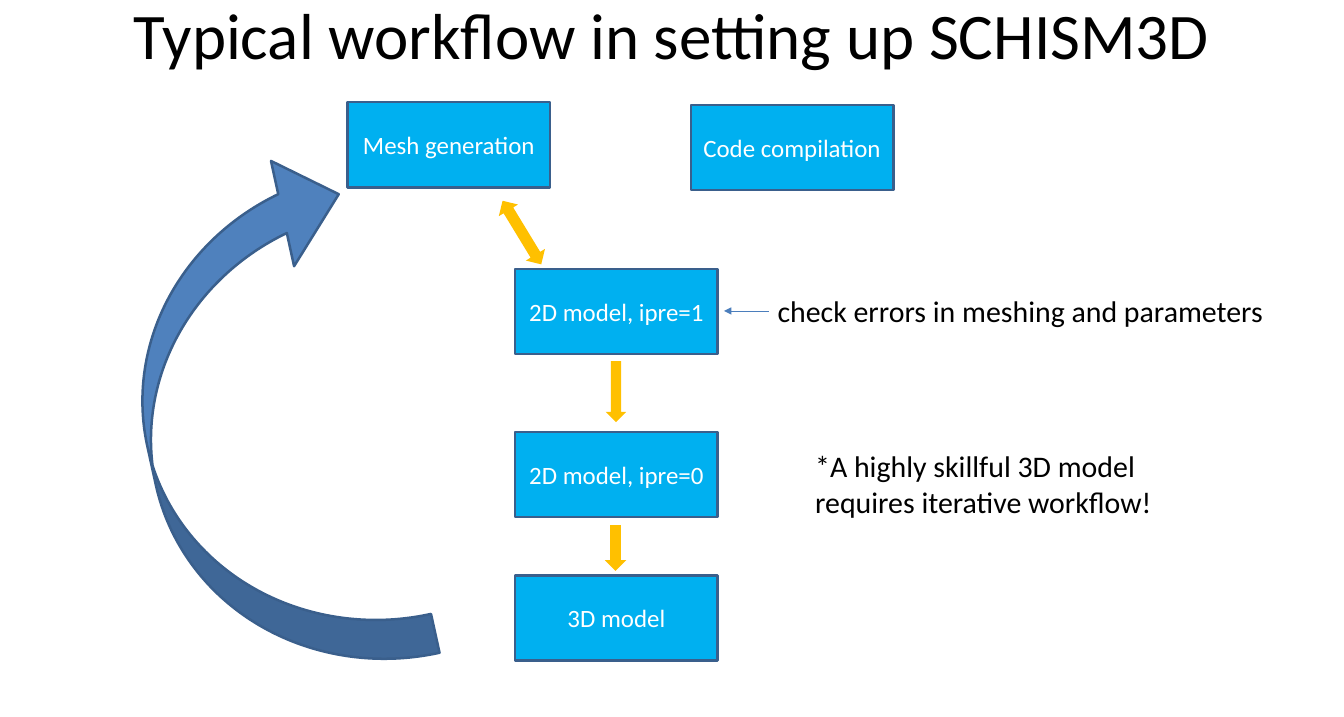
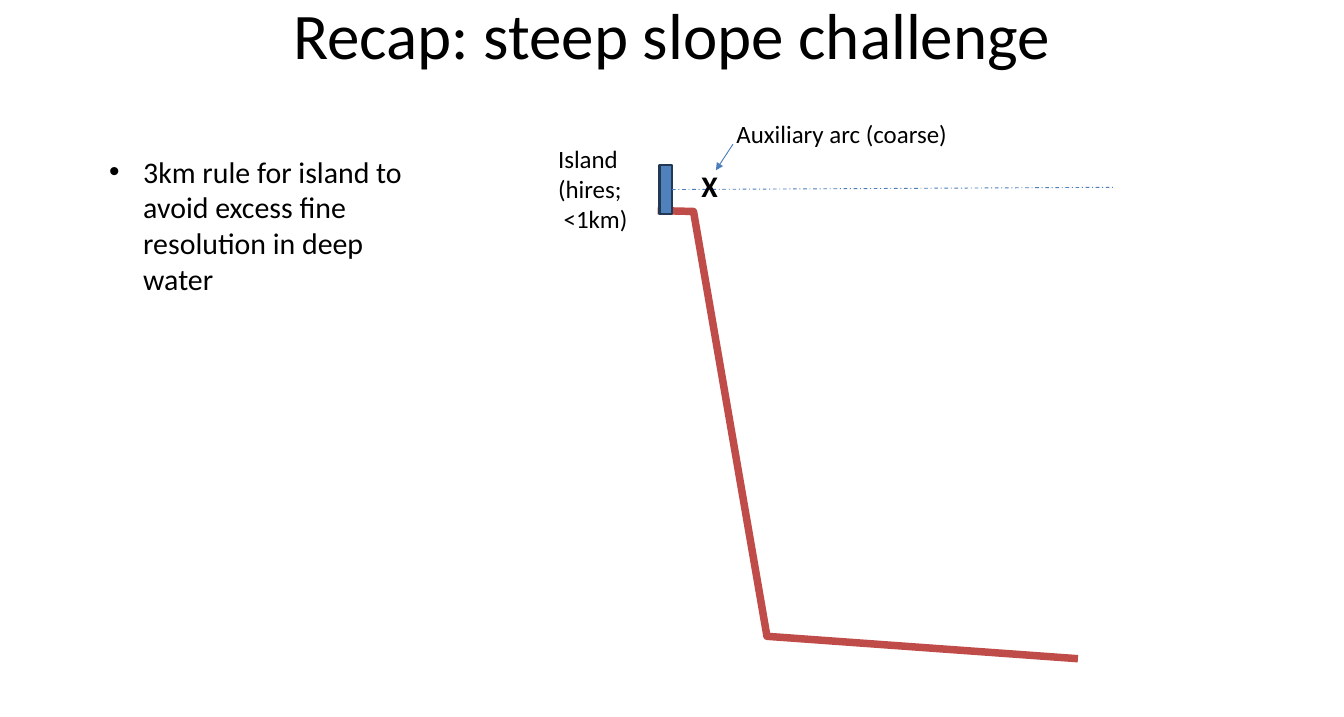
from lxml import etree
from pptx import Presentation
from pptx.dml.color import RGBColor
from pptx.enum.dml import MSO_LINE
from pptx.enum.shapes import MSO_CONNECTOR, MSO_SHAPE
from pptx.enum.text import MSO_ANCHOR, MSO_AUTO_SIZE, PP_ALIGN
from pptx.oxml.ns import qn
from pptx.util import Emu, Pt

PX = 9144  # 100 px to the inch
FONT = "Calibri"
BLACK = RGBColor(0x00, 0x00, 0x00)
WHITE = RGBColor(0xFF, 0xFF, 0xFF)
SKY = RGBColor(0x00, 0xB0, 0xF0)
BLUE = RGBColor(0x4F, 0x81, 0xBD)
BLUE_EDGE = RGBColor(0x3A, 0x5F, 0x8C)
NAVY = RGBColor(0x23, 0x39, 0x53)
LINE_BLUE = RGBColor(0x4B, 0x7E, 0xBC)
AMBER = RGBColor(0xFF, 0xC0, 0x00)
RED = RGBColor(0xBF, 0x4C, 0x48)

TITLE_BOX = (112, 3, 1275, 69)
STEP_SIZE = (226, 95)
STEPS = [
    ("Mesh generation", 388, 114),
    ("Code compilation", 771, 117),
    ("2D model, ipre=1", 575, 300),
    ("2D model, ipre=0", 575, 482),
    ("3D model", 575, 642),
]
# preset, box, rotation
STEP_ARROWS = [
    (MSO_SHAPE.UP_DOWN_ARROW, (570, 218, 25, 83), 328.7),
    (MSO_SHAPE.DOWN_ARROW, (676, 403, 23, 68), 0),
    (MSO_SHAPE.DOWN_ARROW, (675, 586, 24, 51), 0),
]
LOOP_BOX = (162, 180, 269, 584)
LOOP_ROTATION = 167.6
LOOP_ADJUSTMENTS = (0.165, 0.447, 0.245)
CHECK_NOTE = ("check errors in meshing and parameters", (858, 322, 567, 50))
ITERATION_NOTE = ("*A highly skillful 3D model requires iterative workflow!", (900, 495, 450, 91))

SEABED = [(734, 235), (774, 236), (856, 710), (1203, 735)]
ISLAND_BOX = (736, 184, 14, 55)
ISLAND_LABEL = ("Island\n(hires;\n <1km)", (613, 155, 120, 111))
ARC_MARK = ("X", (773, 182, 39, 50))
ARC_LABEL = ("Auxiliary arc (coarse)", (812, 127, 258, 44))
RULE = ("3km rule for island to avoid excess fine resolution in deep water", (112, 166, 358, 172))
BULLET_INDENT = 38


def px(*lengths):
    return [Emu(length * PX) for length in lengths]


def write(shape, text, size, color=BLACK, align=PP_ALIGN.LEFT, bold=False):
    shape.text_frame.text = text
    for paragraph in shape.text_frame.paragraphs:
        paragraph.alignment = align
        for run in paragraph.runs:
            font = run.font
            font.name, font.size, font.bold = FONT, Pt(size), bold
            font.color.rgb = color


def add_label(slide, label, size, wrap=True, bold=False):
    text, box = label
    shape = slide.shapes.add_textbox(*px(*box))
    write(shape, text, size, bold=bold)
    shape.text_frame.word_wrap = wrap
    shape.text_frame.auto_size = MSO_AUTO_SIZE.SHAPE_TO_FIT_TEXT
    return shape


def add_block(slide, preset, box, fill, edge=None, rotation=0):
    shape = slide.shapes.add_shape(preset, *px(*box))
    shape.shadow.inherit = False
    shape.rotation = rotation
    shape.fill.solid()
    shape.fill.fore_color.rgb = fill
    if edge is None:
        shape.line.fill.background()
    else:
        shape.line.color.rgb = edge
        shape.line.width = Pt(2)
    return shape


def add_line(slide, start, end, arrow=False):
    connector = slide.shapes.add_connector(MSO_CONNECTOR.STRAIGHT, *px(*start, *end))
    connector.line.color.rgb = LINE_BLUE
    connector.line.width = Pt(0.75)
    if arrow:
        outline = connector.line._get_or_add_ln()
        etree.SubElement(outline, qn("a:tailEnd"), type="triangle")
    etree.SubElement(connector._element.spPr, qn("a:effectLst"))
    return connector


def add_bullet(paragraph):
    properties = paragraph._p.get_or_add_pPr()
    indent = BULLET_INDENT * PX
    properties.set("marL", str(indent))
    properties.set("indent", str(-indent))
    etree.SubElement(properties, qn("a:buFont"), typeface="Arial")
    etree.SubElement(properties, qn("a:buChar"), char="•")


def add_titled_slide(presentation, title):
    slide = presentation.slides.add_slide(presentation.slide_layouts[6])
    shape = slide.shapes.add_textbox(*px(*TITLE_BOX))
    write(shape, title, 52.2, align=PP_ALIGN.CENTER)
    shape.text_frame.word_wrap = True
    shape.text_frame.vertical_anchor = MSO_ANCHOR.MIDDLE
    return slide


def build_workflow(presentation):
    slide = add_titled_slide(presentation, "Typical workflow in setting up SCHISM3D")
    for text, left, top in STEPS:
        step = add_block(slide, MSO_SHAPE.FLOWCHART_PROCESS, (left, top, *STEP_SIZE), SKY, BLUE_EDGE)
        write(step, text, 20, WHITE, PP_ALIGN.CENTER)
        step.text_frame.vertical_anchor = MSO_ANCHOR.MIDDLE
    for preset, box, rotation in STEP_ARROWS:
        add_block(slide, preset, box, AMBER, rotation=rotation)

    note = add_label(slide, CHECK_NOTE, 24, wrap=False)
    pointer = add_line(slide, (858, 347), (808, 347), arrow=True)
    pointer.begin_connect(note, 1)

    loop = add_block(slide, MSO_SHAPE.CURVED_LEFT_ARROW, LOOP_BOX, BLUE, BLUE_EDGE, LOOP_ROTATION)
    for index, value in enumerate(LOOP_ADJUSTMENTS):
        loop.adjustments[index] = value
    add_label(slide, ITERATION_NOTE, 24)


def build_slope(presentation):
    slide = add_titled_slide(presentation, "Recap: steep slope challenge")
    builder = slide.shapes.build_freeform(*SEABED[0], scale=PX)
    builder.add_line_segments(SEABED[1:], close=False)
    seabed = builder.convert_to_shape()
    seabed.shadow.inherit = False
    seabed.fill.background()
    seabed.line.color.rgb = RED
    seabed.line.width = Pt(6)

    island = add_block(slide, MSO_SHAPE.RECTANGLE, ISLAND_BOX, BLUE, NAVY)
    surface = add_line(slide, (750, 211), (1242, 209))
    surface.line.dash_style = MSO_LINE.DASH_DOT
    surface.begin_connect(island, 3)

    add_label(slide, ISLAND_LABEL, 20)
    add_label(slide, ARC_MARK, 24, wrap=False, bold=True)
    add_label(slide, ARC_LABEL, 20, wrap=False)
    add_line(slide, (818, 161), (799, 190), arrow=True)
    rule = add_label(slide, RULE, 24)
    add_bullet(rule.text_frame.paragraphs[0])


def main():
    presentation = Presentation()
    presentation.slide_width, presentation.slide_height = px(1500, 800)
    build_workflow(presentation)
    build_slope(presentation)
    presentation.save("out.pptx")


if __name__ == "__main__":
    main()
